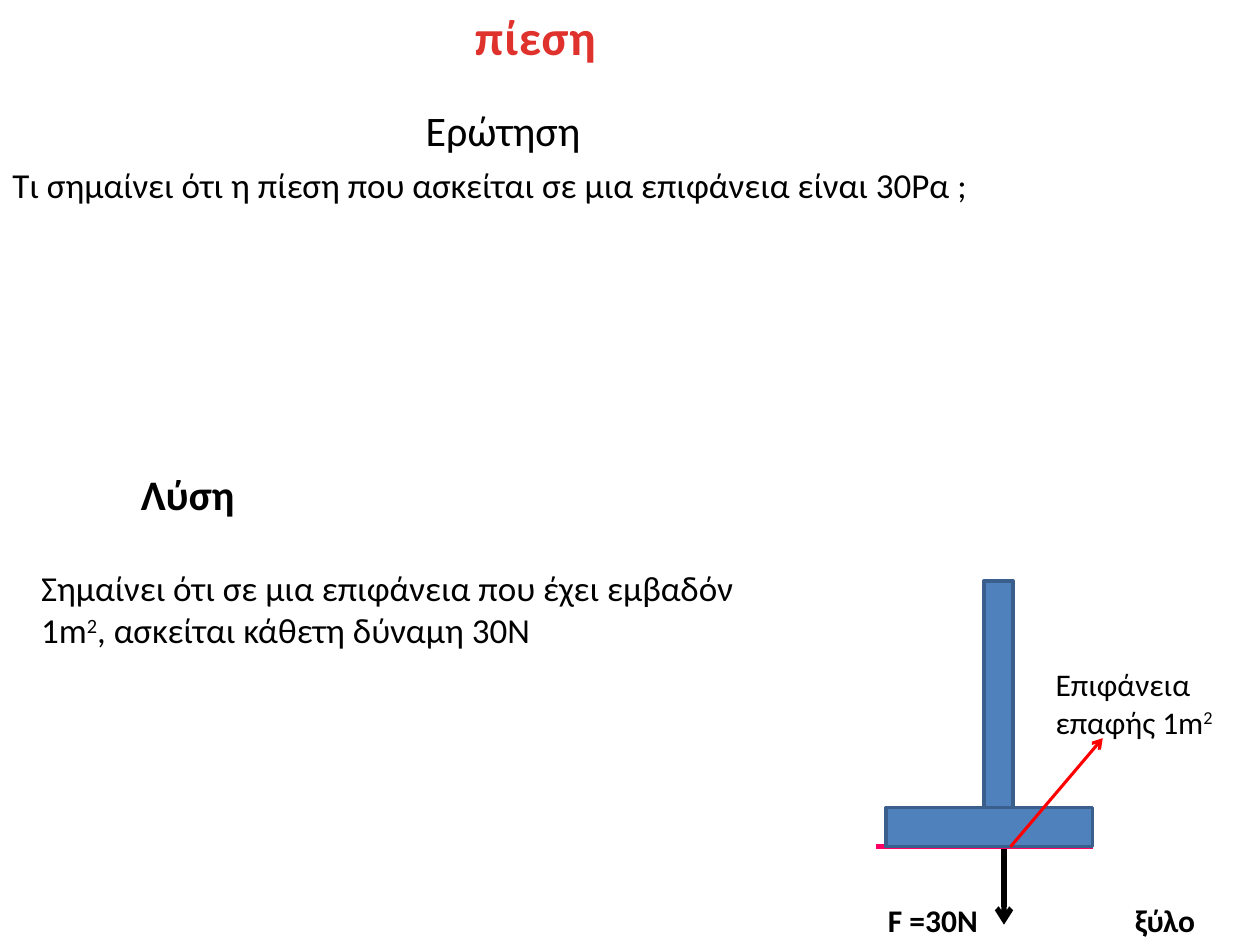
from lxml.etree import SubElement
from pptx import Presentation
from pptx.dml.color import RGBColor
from pptx.enum.shapes import MSO_CONNECTOR, MSO_SHAPE
from pptx.enum.text import MSO_ANCHOR, MSO_AUTO_SIZE as AutoSize, PP_ALIGN
from pptx.oxml.ns import qn
from pptx.util import Cm, Pt

FONT = "Calibri"
BLACK, RED, PINK = "000000", "FF0000", "FF0066"
STEEL, STEEL_EDGE = "4F81BD", "3A5F8C"

# Content: lengths in cm, sizes in points
TITLE = dict(box=(9.32, 0, 4.78, 1.45), runs=["πίεση"], size=28,
             bold=True, color="E0322D", spacing=50)

# Every second run is a superscript
TEXTS = [
    dict(box=(8.33, 1.98, 4.04, 1.27), runs=["Ερώτηση"], size=24),
    dict(box=(0, 3.18, 24.82, 1.12), size=20,
         runs=["Τι σημαίνει ότι η πίεση που ασκείται σε μια επιφάνεια είναι 30Ρα ;"]),
    dict(box=(2.59, 9.32, 4.17, 1.27), runs=["Λύση"], size=24, bold=True),
    dict(box=(0.58, 11.3, 14.68, 1.96), size=20,
         runs=["Σημαίνει ότι σε μια επιφάνεια που έχει εμβαδόν 1m", "2",
               ", ασκείται κάθετη δύναμη 30Ν"]),
    dict(box=(21.03, 13.28, 4.37, 1.8), runs=["Επιφάνεια επαφής 1m", "2"], size=18),
    dict(box=(17.65, 18.03, 2.97, 1.02), runs=["F =30Ν"], size=18, bold=True),
    dict(box=(22.63, 18.03, 2.77, 1.02), runs=["ξύλο"], size=18, bold=True),
]

# The body stands on the contact level; its post stands on its base
CONTACT_Y = 17.07
BASE_LEFT, BASE_WIDTH, BASE_HEIGHT = 17.86, 4.17, 0.79
POST_LEFT, POST_WIDTH, POST_HEIGHT = 19.84, 0.58, 4.57
BASE_TOP = CONTACT_Y - BASE_HEIGHT
BLOCKS = [
    (POST_LEFT, BASE_TOP - POST_HEIGHT, POST_WIDTH, POST_HEIGHT),
    (BASE_LEFT, BASE_TOP, BASE_WIDTH, BASE_HEIGHT),
]

# start, end, colour, width, arrowhead
FORCE = ((20.24, CONTACT_Y), (20.24, 18.64), BLACK, 3, True)
CONTACT = ((17.65, CONTACT_Y), (BASE_LEFT + BASE_WIDTH, CONTACT_Y), PINK, 3, False)
POINTER = ((20.37, CONTACT_Y), (22.23, 14.88), RED, 1.75, True)


def rgb(code):
    return RGBColor.from_string(code)


def place(shape, box):
    shape.left, shape.top, shape.width, shape.height = map(Cm, box)


def write(shape, box, runs, size, bold=False, color=BLACK, spacing=None):
    place(shape, box)
    frame = shape.text_frame
    frame.word_wrap = True
    frame.auto_size = AutoSize.SHAPE_TO_FIT_TEXT
    frame.vertical_anchor = MSO_ANCHOR.TOP
    paragraph = frame.paragraphs[0]
    paragraph.alignment = PP_ALIGN.LEFT
    for index, words in enumerate(runs):
        run = paragraph.add_run()
        run.text = words
        font = run.font
        font.name, font.size, font.bold = FONT, Pt(size), bold
        font.color.rgb = rgb(color)
        properties = font._element
        if index % 2:
            properties.set("baseline", "30000")
        if spacing:
            properties.set("spc", str(spacing))


def add_block(slide, box):
    block = slide.shapes.add_shape(MSO_SHAPE.RECTANGLE, *map(Cm, box))
    block.shadow.inherit = False
    block.fill.solid()
    block.fill.fore_color.rgb = rgb(STEEL)
    block.line.color.rgb = rgb(STEEL_EDGE)
    block.line.width = Pt(2)


def add_line(slide, start, end, color, width, arrow):
    connector = slide.shapes.add_connector(
        MSO_CONNECTOR.STRAIGHT, *map(Cm, start + end))
    connector.line.color.rgb = rgb(color)
    connector.line.width = Pt(width)
    if arrow:
        SubElement(connector.line._get_or_add_ln(), qn("a:tailEnd"), type="arrow")
    SubElement(connector._element.spPr, qn("a:effectLst"))


def main():
    deck = Presentation()
    deck.slide_width, deck.slide_height = Cm(25.4), Cm(19.05)
    slide = deck.slides.add_slide(deck.slide_layouts[5])

    # Title, question and answer
    write(slide.shapes.title, **TITLE)
    for text in TEXTS:
        write(slide.shapes.add_textbox(0, 0, 0, 0), **text)

    # Body pressing on the surface
    add_line(slide, *FORCE)
    add_line(slide, *CONTACT)
    for box in BLOCKS:
        add_block(slide, box)
    add_line(slide, *POINTER)

    deck.save("out.pptx")


if __name__ == "__main__":
    main()
